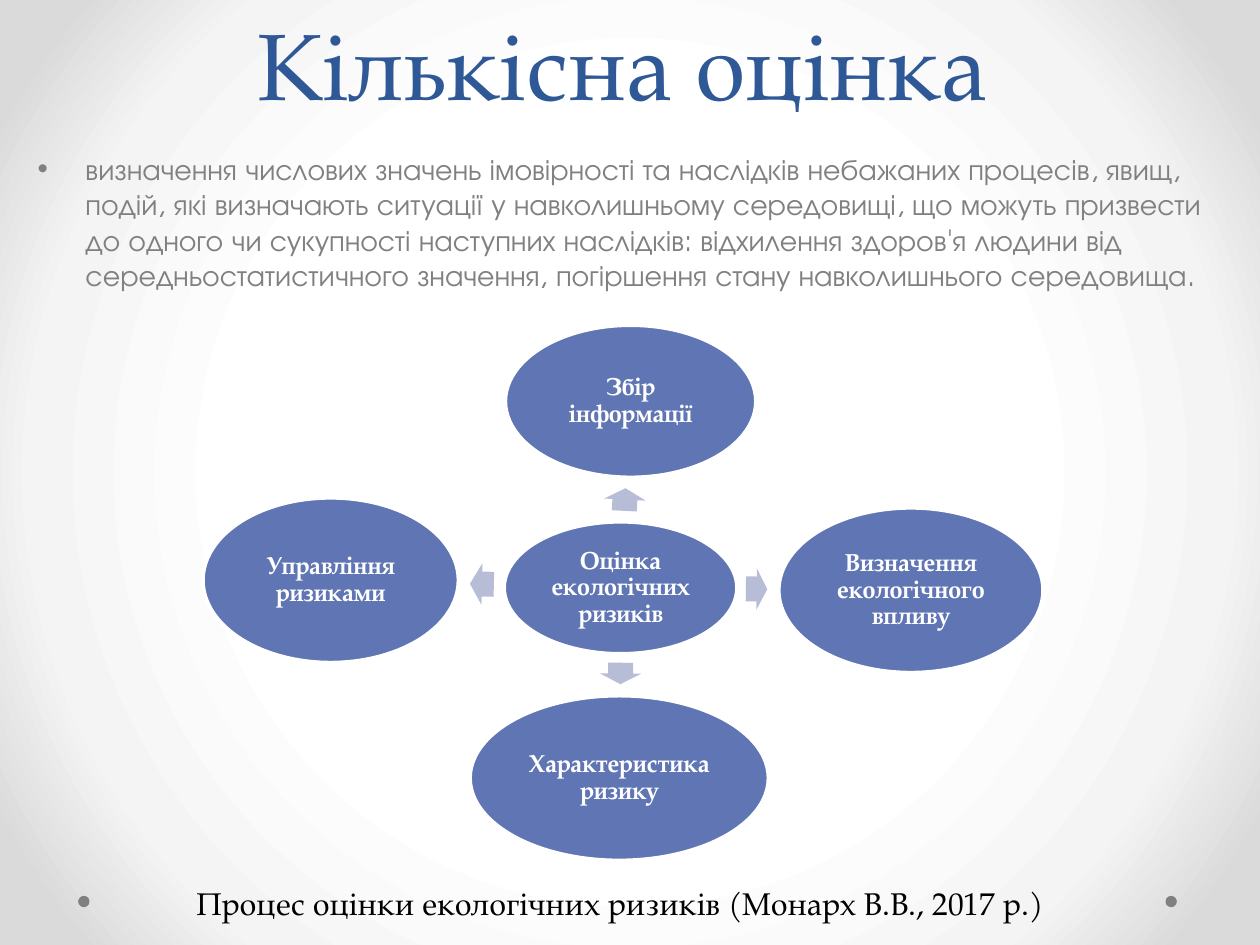
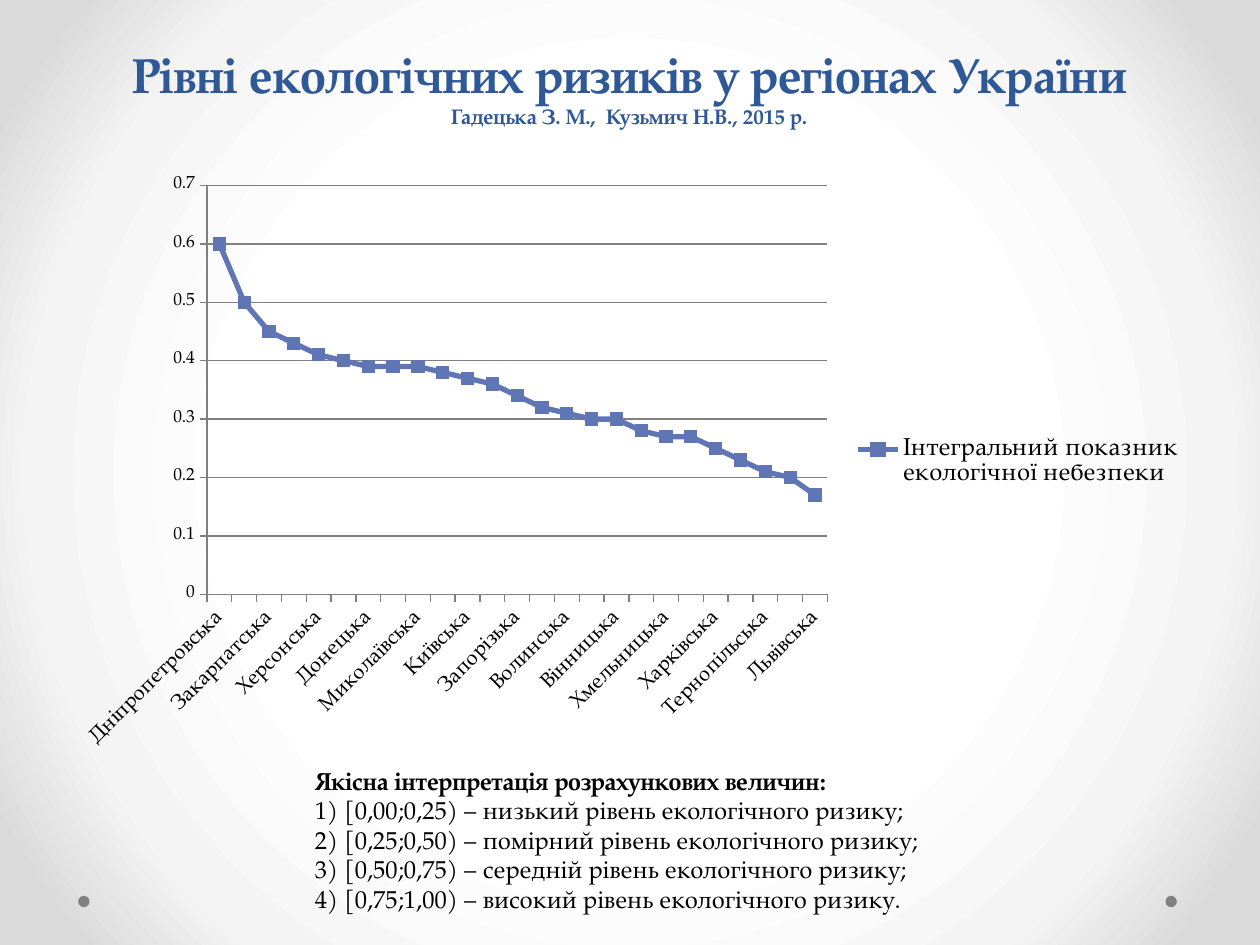
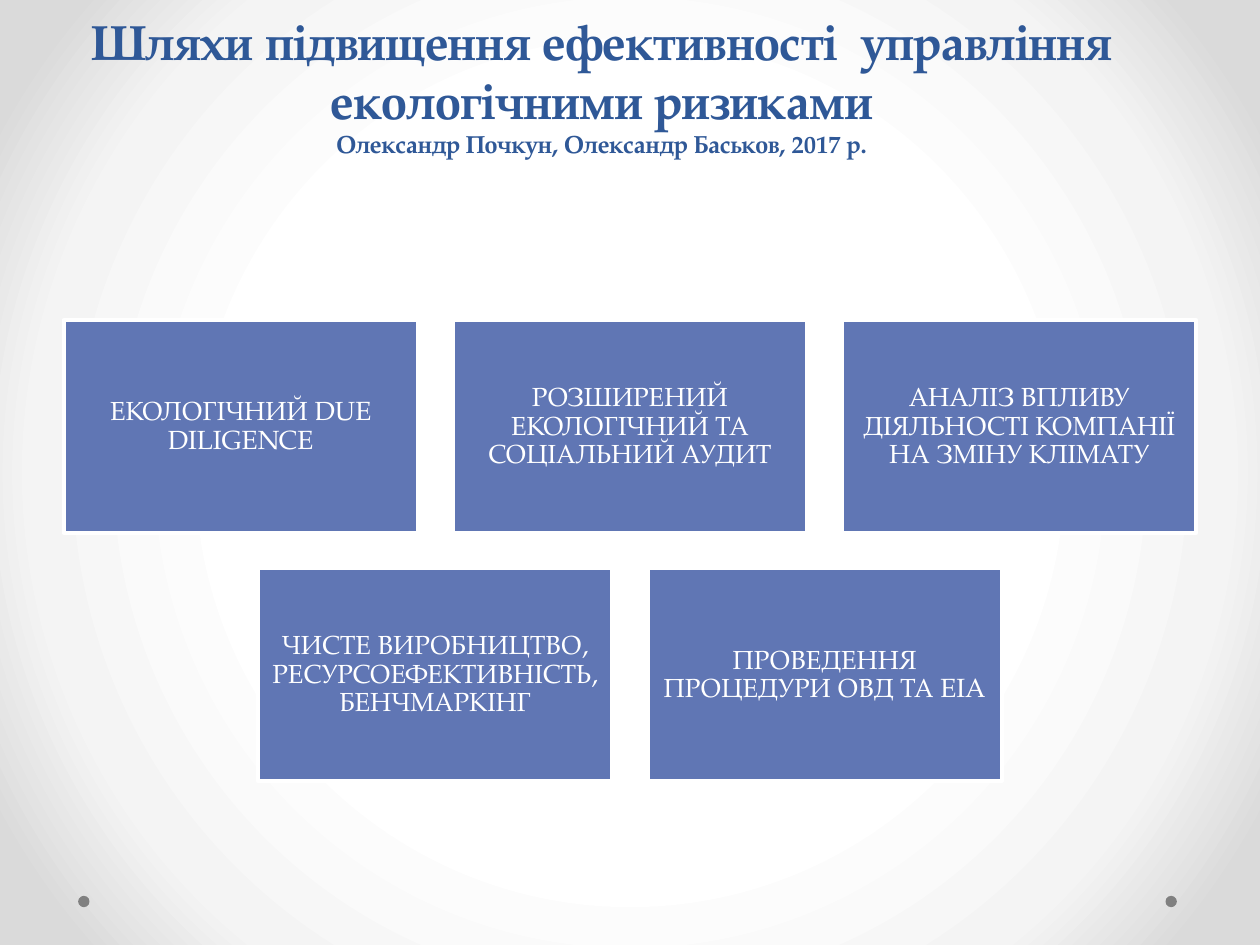
from lxml import etree
from pptx import Presentation
from pptx.chart.data import CategoryChartData
from pptx.dml.color import RGBColor
from pptx.enum import chart as ch, shapes, text
from pptx.oxml import parse_xml
from pptx.oxml.ns import nsdecls, qn
from pptx.util import Inches, Pt

SERIF = "TeX Gyre Pagella"
SANS = "TeX Gyre Adventor"
NAVY = RGBColor(0x2F, 0x58, 0x97)
BLUE = RGBColor(0x60, 0x76, 0xB4)
PALE = RGBColor(0xB7, 0xBD, 0xD6)
GRAY = RGBColor(0x80, 0x80, 0x80)
WHITE = RGBColor(0xFF, 0xFF, 0xFF)
BLACK = RGBColor(0, 0, 0)
BACKGROUND_STOPS = ((50, "FFFFFF"), (76, "F4F4F4"), (92, "DADADA"))


class Deck:
    """Holds the shared style and the current slide."""

    def __init__(self):
        self.prs = Presentation()
        self.prs.slide_width, self.prs.slide_height = Inches(10), Inches(7.5)
        self.slide = None
        self.paint_background()

    def paint_background(self):
        master = self.prs.slide_master
        master.background.fill.solid()
        bg = master.element.find(".//" + qn("p:bgPr"))
        stops = "".join(f'<a:gs pos="{pos * 1000}"><a:srgbClr val="{color}"/></a:gs>'
                        for pos, color in BACKGROUND_STOPS)
        bg.replace(bg[0], parse_xml(
            f'<a:gradFill {nsdecls("a")} rotWithShape="1"><a:gsLst>{stops}</a:gsLst>'
            '<a:path path="circle"><a:fillToRect l="50000" t="50000" r="50000" b="50000"/>'
            '</a:path></a:gradFill>'))

    def new_slide(self, box, lines, bold=True, spacing=None):
        """Start a slide; lines are (text, size) pairs of its title."""
        self.slide = self.prs.slides.add_slide(self.prs.slide_layouts[5])
        for x in (0.62, 9.25):
            self.shape(shapes.MSO_SHAPE.OVAL, (x, 7.11, 0.09, 0.09), GRAY)
        sp = self.slide.shapes.title
        sp.left, sp.top, sp.width, sp.height = map(Inches, box)
        tf = sp.text_frame
        tf.auto_size = text.MSO_AUTO_SIZE.NONE
        tf.vertical_anchor = text.MSO_ANCHOR.BOTTOM
        tf.text = "\n".join(line for line, _ in lines)
        for p, (_, size) in zip(tf.paragraphs, lines):
            p.alignment = text.PP_ALIGN.CENTER
            p.line_spacing = spacing
            self.style(p, size, NAVY, bold)

    @staticmethod
    def style(p, size, color, bold=False, font=SERIF):
        for r in p.runs:
            r.font.size, r.font.bold, r.font.name = Pt(size), bold, font
            r.font.color.rgb = color

    def shape(self, kind, box, fill, outline=None):
        sp = self.slide.shapes.add_shape(kind, *map(Inches, box))
        sp.shadow.inherit = False
        sp.fill.solid()
        sp.fill.fore_color.rgb = fill
        if outline is None:
            sp.line.fill.background()
        else:
            sp.line.color.rgb = outline
            sp.line.width = Pt(2.25)
        return sp

    def node(self, kind, box, label, size, inset, bold=False):
        tf = self.shape(kind, box, BLUE, WHITE).text_frame
        tf.word_wrap = True
        tf.vertical_anchor = text.MSO_ANCHOR.MIDDLE
        tf.margin_left = tf.margin_right = tf.margin_top = tf.margin_bottom = Inches(inset)
        tf.text = label
        p = tf.paragraphs[0]
        p.alignment = text.PP_ALIGN.CENTER
        p.line_spacing = 0.9
        self.style(p, size, WHITE, bold)

    def arrow(self, box, angle):
        sp = self.shape(shapes.MSO_SHAPE.RIGHT_ARROW, box, PALE)
        sp.adjustments[0], sp.adjustments[1] = 0.6, 0.5
        sp.rotation = angle

    def textbox(self, box, lines, size, color=BLACK, font=SERIF):
        tf = self.slide.shapes.add_textbox(*map(Inches, box)).text_frame
        tf.word_wrap = True
        tf.text = "\n".join(lines)
        for p in tf.paragraphs:
            self.style(p, size, color, font=font)
        return tf

    def bullet(self, box, line, size):
        p = self.textbox(box, [line], size, GRAY, SANS).paragraphs[0]
        pPr = p._p.get_or_add_pPr()
        pPr.set("marL", str(Inches(0.38)))
        pPr.set("indent", str(-Inches(0.38)))
        etree.SubElement(pPr, qn("a:buFont"), typeface="Arial")
        etree.SubElement(pPr, qn("a:buChar"), char="•")

    def line_chart(self, box, name, points):
        data = CategoryChartData()
        data.categories = [region for region, _ in points]
        data.add_series(name, [value for _, value in points])
        chart = self.slide.shapes.add_chart(
            ch.XL_CHART_TYPE.LINE_MARKERS, *map(Inches, box), data).chart
        chart.has_title = False
        chart.font.name, chart.font.size = SERIF, Pt(10)
        chart.font.color.rgb = BLACK
        chart.has_legend = True
        chart.legend.position = ch.XL_LEGEND_POSITION.RIGHT
        chart.legend.include_in_layout = False
        chart.legend.font.size = Pt(14)
        # Axes
        cat, val = chart.category_axis, chart.value_axis
        for axis in (cat, val):
            axis.major_tick_mark = ch.XL_TICK_MARK.OUTSIDE
            axis.format.line.color.rgb = GRAY
        cat.tick_labels.font.size = Pt(12)
        cat._element.txPr.find(qn("a:bodyPr")).set("rot", "-2700000")
        val.minimum_scale, val.maximum_scale, val.major_unit = 0, 0.7, 0.1
        val.major_gridlines.format.line.color.rgb = GRAY
        # Series
        chart.plots[0].vary_by_categories = False
        series = chart.plots[0].series[0]
        series.smooth = False
        series.format.line.color.rgb = BLUE
        series.format.line.width = Pt(3)
        series.marker.style = ch.XL_MARKER_STYLE.SQUARE
        series.marker.size = 7
        series.marker.format.fill.solid()
        series.marker.format.fill.fore_color.rgb = BLUE
        series.marker.format.line.color.rgb = BLUE


def assessment_slide(deck):
    deck.new_slide((0.44, 0.13, 9, 0.87), [("Кількісна оцінка", 54)],
                   bold=False, spacing=Pt(58))
    deck.bullet((0.2, 1.15, 9.69, 1.34),
                "визначення числових значень імовірності та наслідків небажаних процесів, "
                "явищ, подій, які визначають ситуації у навколишньому середовищі, що можуть "
                "призвести до одного чи сукупності наступних наслідків: відхилення здоров'я "
                "людини від середньостатистичного значення, погіршення стану навколишнього "
                "середовища.", 16.8)
    # Centre and the four stages around it
    stages = [
        ((4, 4.14, 1.85, 1.05), "Оцінка екологічних ризиків"),
        ((4.01, 2.58, 1.99, 1.21), "Збір інформації"),
        ((6.18, 4.03, 2.1, 1.31), "Визначення екологічного впливу"),
        ((3.73, 5.52, 2.37, 1.31), "Характеристика ризику"),
        ((1.61, 3.95, 2.03, 1.31), "Управління ризиками"),
    ]
    for box, label in stages:
        deck.node(shapes.MSO_SHAPE.OVAL, box, label, 14, 0.02, bold=True)
    arrows = [(4.87, 3.8, 0.18, 272.9), (5.92, 4.51, 0.17, 0.7),
              (4.84, 5.18, 0.17, 90.5), (3.73, 4.47, 0.19, 181.3)]
    for x, y, length, angle in arrows:
        deck.arrow((x, y, length, 0.33), angle)
    deck.textbox((1.46, 6.97, 7.17, 0.4),
                 ["Процес оцінки екологічних ризиків (Монарх В.В., 2017 р.)"], 18)


def regions_slide(deck):
    deck.new_slide((0.31, 0.13, 9.37, 0.94), [
        ("Рівні екологічних ризиків у регіонах України", 28),
        ("Гадецька З. М.,  Кузьмич Н.В., 2015 р.", 12)])
    tf = deck.textbox((2.4, 6.03, 5.2, 1.28), [
        "Якісна інтерпретація розрахункових величин:",
        "1) [0,00;0,25) – низький рівень екологічного ризику;",
        "2) [0,25;0,50) – помірний рівень екологічного ризику;",
        "3) [0,50;0,75) – середній рівень екологічного ризику;",
        "4) [0,75;1,00) – високий рівень екологічного ризику."], 14)
    deck.style(tf.paragraphs[0], 14, BLACK, bold=True)
    deck.line_chart((0.5, 1.31, 9, 4.72), "Інтегральний показник екологічної небезпеки", [
        ("Дніпропетровська", 0.6), ("Луганська", 0.5), ("Закарпатська", 0.45),
        ("Кіровоградська", 0.43), ("Херсонська", 0.41), ("Житомирська", 0.4),
        ("Донецька", 0.39), ("Івано-Франківська", 0.39), ("Миколаївська", 0.39),
        ("Чернігівська", 0.38), ("Київська", 0.37), ("Чернівецька", 0.36),
        ("Запорізька", 0.34), ("Сумська", 0.32), ("Волинська", 0.31),
        ("Рівненська", 0.3), ("Вінницька", 0.3), ("Черкаська", 0.28),
        ("Хмельницька", 0.27), ("Полтавська", 0.27), ("Харківська", 0.25),
        ("Одеська", 0.23), ("Тернопільська", 0.21), ("АРК", 0.2), ("Львівська", 0.17)])


def measures_slide(deck):
    deck.new_slide((0.01, 0.03, 9.53, 1.28), [
        ("Шляхи підвищення ефективності  управління екологічними ризиками", 28),
        ("Олександр Почкун, Олександр Баськов, 2017 р.", 14)])
    # Rows of equal cards, each row centred on the slide
    rows = [
        ["ЕКОЛОГІЧНИЙ DUE DILIGENCE",
         "РОЗШИРЕНИЙ ЕКОЛОГІЧНИЙ ТА СОЦІАЛЬНИЙ АУДИТ",
         "АНАЛІЗ ВПЛИВУ ДІЯЛЬНОСТІ КОМПАНІЇ НА ЗМІНУ КЛІМАТУ"],
        ["ЧИСТЕ ВИРОБНИЦТВО, РЕСУРСОЕФЕКТИВНІСТЬ, БЕНЧМАРКІНГ",
         "ПРОВЕДЕННЯ ПРОЦЕДУРИ ОВД ТА EIA"],
    ]
    width, height, gap, top = 2.81, 1.69, 0.28, 2.54
    for i, row in enumerate(rows):
        left = (10 - len(row) * width - (len(row) - 1) * gap) / 2
        for j, label in enumerate(row):
            box = (left + j * (width + gap), top + i * (height + gap), width, height)
            deck.node(shapes.MSO_SHAPE.RECTANGLE, box, label, 15, 0.06)


def main():
    deck = Deck()
    assessment_slide(deck)
    regions_slide(deck)
    measures_slide(deck)
    deck.prs.save("out.pptx")


if __name__ == "__main__":
    main()
